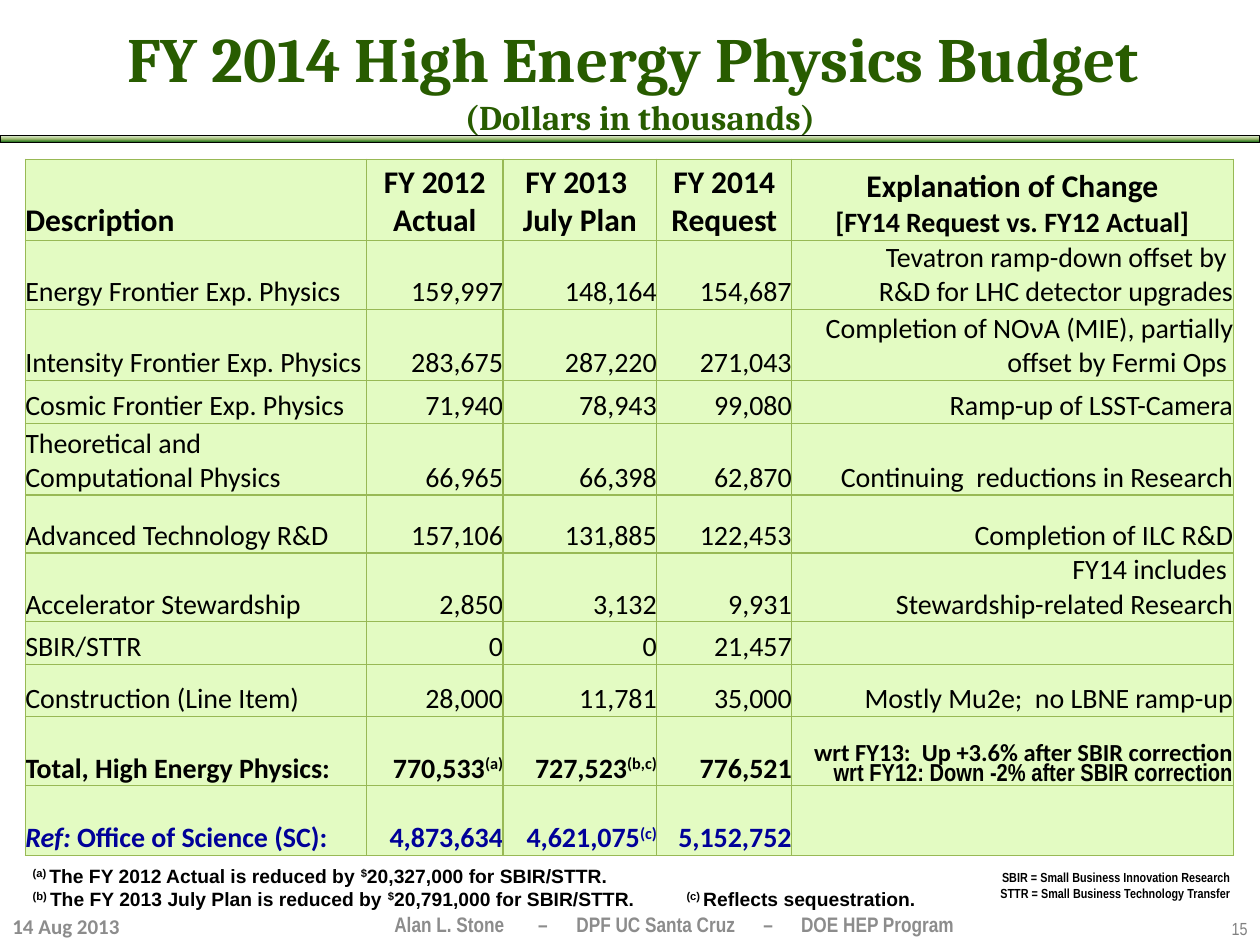
"""Build the FY 2014 High Energy Physics budget slide."""
import copy
import pptx
import pptx.util
import pptx.dml.color
import pptx.enum.shapes
import pptx.enum.text
import pptx.oxml.ns
import pptx.oxml.xmlchemy

Cm, Pt = pptx.util.Cm, pptx.util.Pt
RGB = pptx.dml.color.RGBColor
ALIGN = pptx.enum.text.PP_ALIGN
ANCHOR = pptx.enum.text.MSO_ANCHOR
qn = pptx.oxml.ns.qn
make = pptx.oxml.xmlchemy.OxmlElement

BLACK, NAVY, GREEN = RGB(0, 0, 0), RGB(0, 0, 0x99), RGB(0x28, 0x5C, 0)
GREY, DIM = RGB(0x8C, 0x8C, 0x8C), RGB(0x80, 0x80, 0x80)
PALE, EDGE = RGB(0xE3, 0xFB, 0xC2), RGB(0x98, 0xB9, 0x55)
BAR = [RGB(0xDD, 0xEB, 0xCF), RGB(0x9C, 0xB8, 0x6E), RGB(0x15, 0x6B, 0x13)]

MARKS = {
    "^": {"sup": 30000},
    "_": {"italic": True},
    "~": {"name": "Arial"},
    "=": {"size": Pt(16)},
    "%": {"name": "Arial Narrow"},
    "<": {"size": Pt(19.8)},
}

TITLE = "FY 2014 High Energy Physics Budget \v|<(Dollars in thousands)"
ROWS = [
    ("Description", "FY 2012 Actual", "FY 2013 \nJuly Plan", "FY 2014 Request",
     "Explanation of Change\n|=[FY14 Request vs. FY12 Actual]"),
    ("Energy Frontier Exp. Physics", "159,997", "148,164", "154,687",
     "Tevatron ramp-down offset by \nR&D for LHC detector upgrades"),
    ("Intensity Frontier Exp. Physics", "283,675", "287,220", "271,043",
     "Completion of NO|~ν|A (MIE), partially offset by Fermi Ops "),
    ("Cosmic Frontier Exp. Physics", "71,940", "78,943", "99,080",
     "Ramp-up of LSST-Camera"),
    ("Theoretical and Computational Physics", "66,965", "66,398", "62,870",
     "Continuing  reductions in Research"),
    ("Advanced Technology R&D", "157,106", "131,885", "122,453",
     "Completion of ILC R&D"),
    ("Accelerator Stewardship", "2,850", "3,132", "9,931",
     "FY14 includes \nStewardship-related Research"),
    ("SBIR/STTR", "0", "0", "21,457", ""),
    ("Construction (Line Item)", "28,000", "11,781", "35,000",
     "Mostly Mu2e;  no LBNE ramp-up"),
    ("Total, High Energy Physics:", "770,533|^(a)", "727,523|^(b,c)", "776,521",
     "wrt FY13:  Up +3.6% after SBIR correction\n"
     "|%wrt FY12: Down -2% after SBIR correction"),
    ("_Ref: |Office of Science (SC):", "4,873,634", "4,621,075|^(c)",
     "5,152,752", ""),
]
WIDTHS = [6.88, 2.75, 3.1, 2.72, 8.9]
HIGHS = [1.63, 1.4, 1.43, 0.86, 1.45, 1.17, 1.37, 0.86, 1.05, 1.4, 1.4]

NOTES = [
    ((0.41, 17.3, 24.05, 1.19),
     "^(a) |The FY 2012 Actual is reduced by |^$|20,327,000 for SBIR/STTR.\n"
     "^(b) |The FY 2013 July Plan is reduced by |^$|20,791,000 for SBIR/STTR."
     "\t|^(c) |Reflects sequestration.",
     {"name": "Arial", "size": Pt(11), "color": BLACK}, ALIGN.LEFT, ANCHOR.TOP, [13.18]),
    ((19.79, 17.4, 5.26, 0.89),
     "SBIR = Small Business Innovation Research\n"
     "STTR = Small Business Technology Transfer",
     {"name": "Arial Narrow", "size": Pt(7.5), "color": BLACK}, ALIGN.RIGHT, ANCHOR.TOP, []),
    ((0, 18.29, 2.72, 0.76), "14 Aug 2013",
     {"name": "Calibri", "size": Pt(12), "color": GREY}, ALIGN.LEFT, ANCHOR.MIDDLE, []),
    ((7.7, 18.21, 13, 0.84),
     "Alan L. Stone\t–\tDPF UC Santa Cruz\t–\tDOE HEP Program",
     {"name": "Arial Narrow", "size": Pt(12), "color": GREY}, ALIGN.LEFT, ANCHOR.MIDDLE,
     [2.9, 3.67, 7.44, 8.2]),
    ((24.36, 18.39, 1.04, 0.66), "15",
     {"name": "Arial Narrow", "size": Pt(10), "color": DIM}, ALIGN.RIGHT, ANCHOR.TOP, []),
]


def style(font, form):
    for key, val in form.items():
        if key == "color":
            font.color.rgb = val
        elif key != "sup":
            setattr(font, key, val)


def write(frame, text, form, align, tabs=()):
    for num, line in enumerate(text.split("\n")):
        para = frame.add_paragraph() if num else frame.paragraphs[0]
        para.alignment = align
        if tabs:
            stops = make("a:tabLst")
            for pos in tabs:
                stop = make("a:tab")
                stop.set("pos", str(int(Cm(pos))))
                stop.set("algn", "l")
                stops.append(stop)
            para._p.get_or_add_pPr().append(stops)
        style(para.font, form)
        for part in filter(None, line.split("|")):
            mark = MARKS.get(part[0], {})
            words = part[1:] if mark else part
            run = para.add_run()
            run.text = words.rstrip("\v")
            style(run.font, {**form, **mark})
            if "sup" in mark:
                run._r.get_or_add_rPr().set("baseline", str(mark["sup"]))
            if words.endswith("\v"):
                para.add_line_break()


def edge(cell):
    props = cell._tc.get_or_add_tcPr()
    for side in "LRTB":
        line = make(f"a:ln{side}")
        line.set("w", str(int(Pt(0.75))))
        fill = make("a:solidFill")
        tint = make("a:srgbClr")
        tint.set("val", str(EDGE))
        fill.append(tint)
        line.append(fill)
        props.append(line)


def add_bar(slide):
    kind = pptx.enum.shapes.MSO_SHAPE.RECTANGLE
    bar = slide.shapes.add_shape(kind, 0, Cm(2.74), Cm(25.4), Cm(0.13))
    bar.shadow.inherit = False
    bar.line.color.rgb = BLACK
    bar.line.width = Pt(0.5)
    bar.fill.gradient()
    bar.fill.gradient_angle = 270
    stops = bar._element.spPr.find(".//" + qn("a:gsLst"))
    stops.insert(1, copy.deepcopy(stops[0]))
    for num, stop in enumerate(bar.fill.gradient_stops):
        stop.position = num / 2
        stop.color.rgb = BAR[num]


def add_grid(slide):
    grid = slide.shapes.add_table(len(ROWS), len(WIDTHS), Cm(0.51), Cm(3.21),
                                  Cm(sum(WIDTHS)), Cm(sum(HIGHS))).table
    for col, wide in zip(grid.columns, WIDTHS):
        col.width = Cm(wide)
    last = len(ROWS) - 1
    for r, texts in enumerate(ROWS):
        grid.rows[r].height = Cm(HIGHS[r])
        for c, text in enumerate(texts):
            cell = grid.cell(r, c)
            edge(cell)
            cell.fill.solid()
            cell.fill.fore_color.rgb = PALE
            for key in ("left", "right", "top", "bottom"):
                setattr(cell, f"margin_{key}", 0)
            cell.vertical_anchor = ANCHOR.BOTTOM
            note = r == last - 1 and c == 4
            size = 18 if r == 0 else 14 if note else 16
            form = {"name": "Calibri", "size": Pt(size),
                    "bold": r in (0, last - 1, last),
                    "color": NAVY if r == last else BLACK}
            align = ALIGN.LEFT if c == 0 else ALIGN.RIGHT if r else ALIGN.CENTER
            write(cell.text_frame, text, form, align)
            if note:
                for para in cell.text_frame.paragraphs:
                    para.line_spacing = 0.85


def main():
    deck = pptx.Presentation()
    deck.slide_width, deck.slide_height = Cm(25.4), Cm(19.05)
    slide = deck.slides.add_slide(deck.slide_layouts[5])
    add_bar(slide)
    head = slide.shapes.title
    spots = zip(("left", "top", "width", "height"), (0.76, 0.58, 24.28, 2.01))
    for key, val in spots:
        setattr(head, key, Cm(val))
    frame = head.text_frame
    frame.auto_size = pptx.enum.text.MSO_AUTO_SIZE.NONE
    frame.vertical_anchor = ANCHOR.MIDDLE
    write(frame, TITLE, {"name": "Cambria", "size": Pt(36), "bold": True,
                         "color": GREEN}, ALIGN.CENTER)
    add_grid(slide)
    for place, text, form, align, anchor, tabs in NOTES:
        frame = slide.shapes.add_textbox(*map(Cm, place)).text_frame
        frame.word_wrap = True
        frame.vertical_anchor = anchor
        write(frame, text, {"bold": text != "15", **form}, align, tabs)
    deck.save("out.pptx")


if __name__ == "__main__":
    main()
